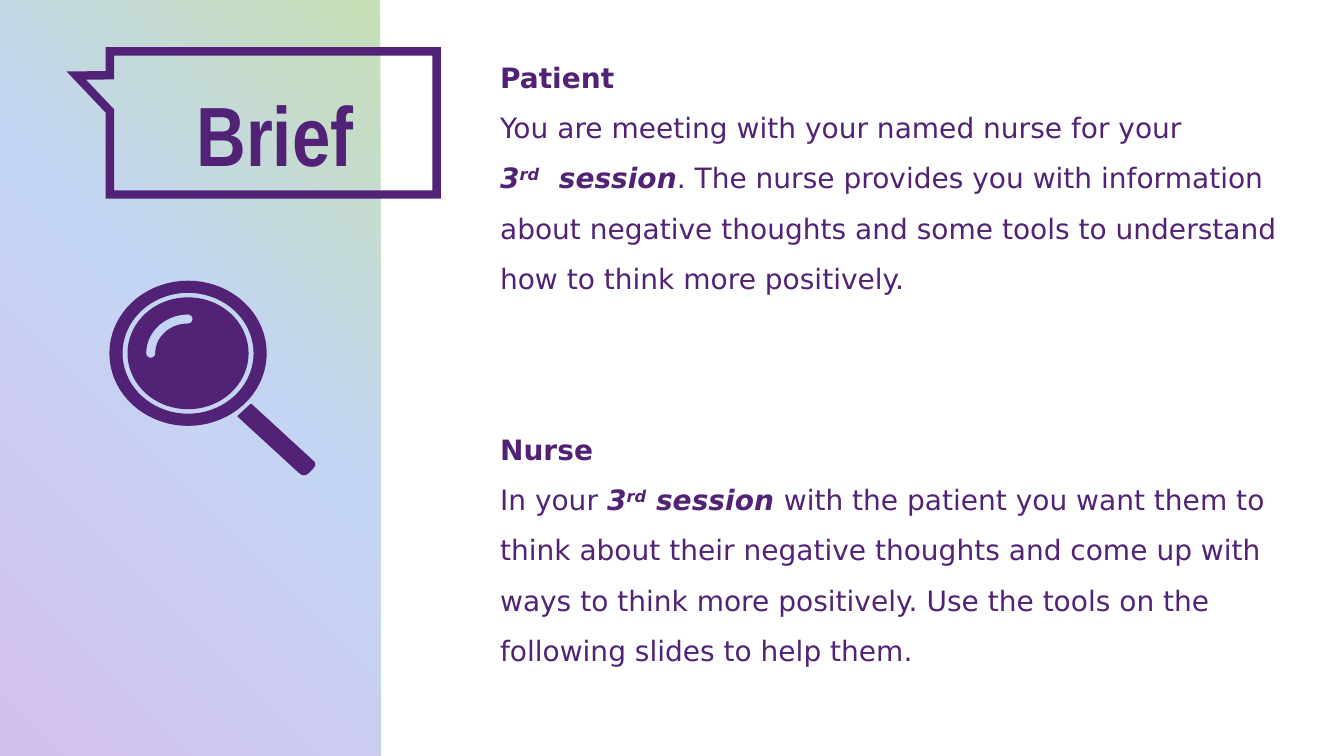
from math import cos, radians, sin

from lxml.etree import SubElement
from pptx import Presentation
from pptx.dml.color import RGBColor
from pptx.enum.shapes import MSO_SHAPE as Preset
from pptx.enum.text import MSO_ANCHOR as Anchor, MSO_AUTO_SIZE as AutoSize, PP_ALIGN as Align
from pptx.oxml import parse_xml
from pptx.oxml.ns import nsdecls, qn
from pptx.util import Inches, Pt

COLORS = {
    "purple": "512275",
    "lilac": "D3C1ED",
    "sky": "C4D5F3",
    "green": "C5E0B4",
}
PANEL_STOPS = [(0, "lilac"), (56, "sky"), (100, "green")]
BODY_FONT = {"name": "DejaVu Sans", "size": Pt(20), "bold": False, "italic": False}
TITLE_FONT = {"name": "Arial Narrow", "size": Pt(60), "bold": True}
STYLES = {
    "plain": {},
    "heading": {"bold": True},
    "strong": {"bold": True, "italic": True},
    "raised": {"bold": True, "italic": True},
}
PATIENT = [
    [("Patient", "heading")],
    [("You are meeting with your named nurse for your", "plain")],
    [("3", "strong"), ("rd", "raised"), ("  session", "strong"),
     (". The nurse provides you with information about negative thoughts and some "
      "tools to understand how to think more positively.", "plain")],
]
NURSE = [
    [("Nurse", "heading")],
    [("In your ", "plain"), ("3", "strong"), ("rd", "raised"), (" session ", "strong"),
     ("with the patient you want them to think about their negative thoughts and come up "
      "with ways to think more positively. Use the tools on the following slides to help "
      "them.", "plain")],
]


def purple():
    """Return the main colour of the slide."""
    return RGBColor.from_string(COLORS["purple"])


def set_values(target, values):
    """Set each named attribute on the target."""
    for name, value in values.items():
        setattr(target, name, value)


def place(shape, box):
    """Move a shape into a box given in inches."""
    names = ("left", "top", "width", "height")
    set_values(shape, {name: Inches(value) for name, value in zip(names, box)})


def add_run(paragraph, text, font_values):
    """Append a purple run with the given font values."""
    run = paragraph.add_run()
    run.text = text
    set_values(run.font, font_values)
    run.font.color.rgb = purple()
    return run


def add_panel(slide, box):
    """Draw the gradient side panel behind everything else."""
    panel = slide.shapes.add_shape(Preset.RECTANGLE, *map(Inches, box))
    panel.shadow.inherit = False
    panel.line.fill.background()
    stops = "".join(
        f'<a:gs pos="{position * 1000}"><a:srgbClr val="{COLORS[name]}"/></a:gs>'
        for position, name in PANEL_STOPS
    )
    gradient = parse_xml(
        f'<a:gradFill {nsdecls("a")} rotWithShape="1"><a:gsLst>{stops}</a:gsLst>'
        '<a:path path="circle"><a:fillToRect t="100000" r="100000"/></a:path>'
        '<a:tileRect l="-100000" b="-100000"/></a:gradFill>'
    )
    panel._element.spPr.find(qn("a:prstGeom")).addnext(gradient)
    slide.shapes._spTree.insert(2, panel._element)


def add_title(slide, box):
    """Frame the title in a speech callout."""
    left, top, width, height = box
    callout = slide.shapes.add_shape(Preset.RECTANGULAR_CALLOUT, *map(Inches, box))
    callout.shadow.inherit = False
    callout.fill.background()
    callout.line.color.rgb = purple()
    callout.line.width = Pt(6)
    SubElement(callout.line._get_or_add_ln(), qn("a:miter"), lim="800000")
    callout.adjustments[0], callout.adjustments[1] = -0.603, -0.331

    title = slide.shapes.title
    place(title, (left + 0.57, top + 0.06, width - 1.08, height - 0.11))
    set_values(title.text_frame, {
        "word_wrap": True, "vertical_anchor": Anchor.TOP,
        "auto_size": AutoSize.SHAPE_TO_FIT_TEXT,
    })
    paragraph = title.text_frame.paragraphs[0]
    set_values(paragraph, {"alignment": Align.LEFT, "line_spacing": 1.2})
    paragraph._p.get_or_add_pPr().set("marL", str(Inches(0.19)))
    add_run(paragraph, "Brief", TITLE_FONT)


def arc(center, radii, start, end, step=5):
    """List points along an elliptical arc, angles in degrees."""
    count = abs(end - start) // step
    angles = [radians(start + (end - start) * i / count) for i in range(count + 1)]
    return [(center[0] + radii[0] * cos(a), center[1] + radii[1] * sin(a)) for a in angles]


def add_outline(slide, contours):
    """Draw one purple freeform from closed contours in inches."""
    contours = [[(Inches(x), Inches(y)) for x, y in contour] for contour in contours]
    builder = slide.shapes.build_freeform(*contours[0][0])
    for index, contour in enumerate(contours):
        if index:
            builder.move_to(*contour[0])
        builder.add_line_segments(contour[1:], close=True)
    shape = builder.convert_to_shape()
    shape.shadow.inherit = False
    shape.fill.solid()
    shape.fill.fore_color.rgb = purple()
    shape.line.color.rgb = purple()
    shape.line.width = Pt(0.75)


def add_magnifier(slide, box):
    """Draw the rim, glass and handle of a magnifying glass."""
    left, top = box[:2]
    x, y = center = (left + 0.775, top + 0.715)
    add_outline(slide, [
        arc(center, (0.775, 0.715), 0, 360),
        arc(center, (0.655, 0.605), 0, 360),
    ])
    highlight = (
        arc(center, (0.42, 0.39), 180, 270)
        + arc((x, y - 0.34), (0.05, 0.05), -90, 90, 15)
        + arc(center, (0.32, 0.29), 270, 180)
        + arc((x - 0.37, y), (0.05, 0.05), 0, 180, 15)
    )
    add_outline(slide, [arc(center, (0.595, 0.55), 0, 360), highlight])
    handle = [
        (1.4, 1.22), (1.27, 1.34), (1.88, 1.9), (1.91, 1.92), (1.94, 1.92),
        (1.97, 1.9), (2.01, 1.86), (2.03, 1.83), (2.03, 1.8), (2.01, 1.78),
    ]
    add_outline(slide, [[(left + dx, top + dy) for dx, dy in handle]])


def add_brief(placeholder, box, paragraphs):
    """Fill a body placeholder with a heading and its brief."""
    place(placeholder, box)
    frame = placeholder.text_frame
    set_values(frame, {
        "word_wrap": True, "vertical_anchor": Anchor.TOP,
        "auto_size": AutoSize.SHAPE_TO_FIT_TEXT,
    })
    for index, runs in enumerate(paragraphs):
        paragraph = frame.add_paragraph() if index else frame.paragraphs[0]
        set_values(paragraph, {"line_spacing": 1.5, "space_before": Pt(0)})
        properties = paragraph._p.get_or_add_pPr()
        properties.set("marL", "0")
        properties.set("indent", "0")
        SubElement(properties, qn("a:buNone"))
        for text, style in runs:
            run = add_run(paragraph, text, BODY_FONT | STYLES[style])
            if style == "raised":
                run._r.get_or_add_rPr().set("baseline", "30000")


def main():
    """Build and save the brief slide."""
    presentation = Presentation()
    presentation.slide_width, presentation.slide_height = Inches(13.33), Inches(7.5)
    slide = presentation.slides.add_slide(presentation.slide_layouts[3])
    add_panel(slide, (0, 0, 3.77, 7.5))
    add_title(slide, (1.09, 0.51, 3.24, 1.42))
    add_magnifier(slide, (1.09, 2.79, 2.03, 1.92))
    add_brief(slide.placeholders[1], (4.86, 0.38, 7.92, 2.63), PATIENT)
    add_brief(slide.placeholders[2], (4.86, 4.07, 7.92, 2.63), NURSE)
    presentation.save("out.pptx")


if __name__ == "__main__":
    main()
